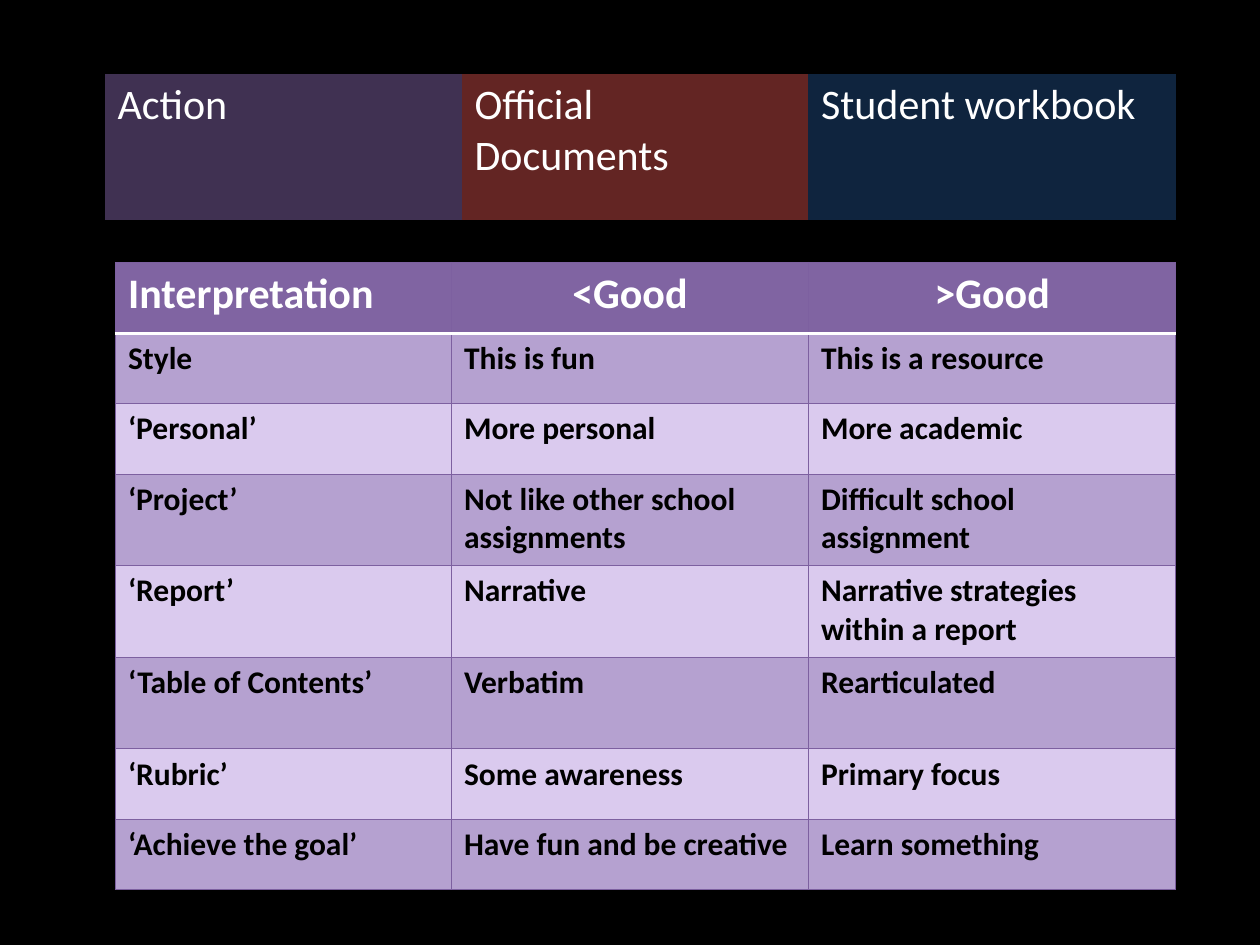
from dataclasses import dataclass

from lxml.etree import SubElement
from pptx import Presentation
from pptx.dml.color import RGBColor
from pptx.enum.text import PP_ALIGN
from pptx.oxml.ns import qn
from pptx.util import Inches, Pt

SLIDE_WIDTH, SLIDE_HEIGHT = 10, 7.5
UNIT = SLIDE_WIDTH / 120  # grid step in inches
NO_STYLE = "{2D5ABB26-0587-4C30-8999-92F81FD0307C}"


@dataclass(frozen=True)
class Theme:
    font: str = "Calibri"
    heading_size: int = 24
    body_size: int = 18
    background: str = "000000"
    white: str = "FFFFFF"
    black: str = "000000"
    action: str = "403152"
    documents: str = "632523"
    student: str = "0F243E"
    header: str = "8064A2"
    dark_band: str = "B5A1D0"
    light_band: str = "DACAEE"
    grid_line: str = "7D60A0"


@dataclass(frozen=True)
class Line:
    color: str
    width: float


@dataclass(frozen=True)
class TableGrid:
    """Position, column widths and row heights in grid units."""
    left: float
    top: float
    columns: tuple[float, ...]
    rows: tuple[float, ...]


THEME = Theme()
SOURCES_GRID = TableGrid(10, 7, (34, 33, 35), (14,))
COMPARISON_GRID = TableGrid(
    11, 25, (32, 34, 35), (6.72,) * 3 + (8.72,) * 3 + (6.72,) * 2)

SOURCES = (
    ("Action", THEME.action),
    ("Official\nDocuments", THEME.documents),
    ("Student workbook", THEME.student),
)
COMPARISON = (
    ("Interpretation", "<Good", ">Good"),
    ("Style", "This is fun", "This is a resource"),
    ("‘Personal’", "More personal", "More academic"),
    ("‘Project’", "Not like other school assignments",
     "Difficult school assignment"),
    ("‘Report’", "Narrative", "Narrative strategies within a report"),
    ("‘Table of Contents’", "Verbatim", "Rearticulated"),
    ("‘Rubric’", "Some awareness", "Primary focus"),
    ("‘Achieve the goal’", "Have fun and be creative", "Learn something"),
)


def units(count: float) -> int:
    return Inches(count * UNIT)


def add_plain_table(page, grid: TableGrid):
    frame = page.shapes.add_table(
        len(grid.rows), len(grid.columns), units(grid.left), units(grid.top),
        units(sum(grid.columns)), units(sum(grid.rows)))
    table = frame.table
    table.horz_banding = False
    table._tbl.tblPr.find(qn("a:tableStyleId")).text = NO_STYLE
    for column, width in zip(table.columns, grid.columns):
        column.width = units(width)
    for row, height in zip(table.rows, grid.rows):
        row.height = units(height)
    return table


def set_borders(cell, **lines: Line) -> None:
    """Draw the sides L, R, T and B, in that order."""
    properties = cell._tc.get_or_add_tcPr()
    for side, line in lines.items():
        border = SubElement(properties, qn(f"a:ln{side}"),
                            w=str(Pt(line.width)))
        fill = SubElement(border, qn("a:solidFill"))
        SubElement(fill, qn("a:srgbClr"), val=line.color)


def write_text(cell, text: str, *, size: int, color: str, bold: bool = False,
               align: PP_ALIGN = PP_ALIGN.LEFT) -> None:
    cell.text = text
    for para in cell.text_frame.paragraphs:
        para.alignment = align
        for span in para.runs:
            span.font.name = THEME.font
            span.font.size = Pt(size)
            span.font.bold = bold
            span.font.color.rgb = RGBColor.from_string(color)


def fill_cell(cell, color: str) -> None:
    cell.fill.solid()
    cell.fill.fore_color.rgb = RGBColor.from_string(color)


def draw_sources(page) -> None:
    table = add_plain_table(page, SOURCES_GRID)
    edge = Line(THEME.black, 1)
    for index, (text, color) in enumerate(SOURCES):
        cell = table.cell(0, index)
        write_text(cell, text, size=THEME.heading_size, color=THEME.white)
        set_borders(cell, T=edge, B=edge)
        fill_cell(cell, color)


def draw_comparison(page) -> None:
    table = add_plain_table(page, COMPARISON_GRID)
    thin, rule = Line(THEME.grid_line, 0.75), Line(THEME.white, 2)
    for row, texts in enumerate(COMPARISON):
        is_header = row == 0
        band = THEME.dark_band if row % 2 else THEME.light_band
        for column, text in enumerate(texts):
            cell = table.cell(row, column)
            centred = is_header and column > 0
            write_text(
                cell, text, bold=True,
                size=THEME.heading_size if is_header else THEME.body_size,
                color=THEME.white if is_header else THEME.black,
                align=PP_ALIGN.CENTER if centred else PP_ALIGN.LEFT)
            set_borders(cell, L=thin, R=thin, T=rule if row == 1 else thin,
                        B=rule if is_header else thin)
            fill_cell(cell, THEME.header if is_header else band)


def main() -> None:
    deck = Presentation()
    deck.slide_width = Inches(SLIDE_WIDTH)
    deck.slide_height = Inches(SLIDE_HEIGHT)
    page = deck.slides.add_slide(deck.slide_layouts[6])

    # Background
    page.background.fill.solid()
    page.background.fill.fore_color.rgb = RGBColor.from_string(
        THEME.background)

    # Sources strip above the comparison
    draw_sources(page)
    draw_comparison(page)
    deck.save("out.pptx")


if __name__ == "__main__":
    main()
